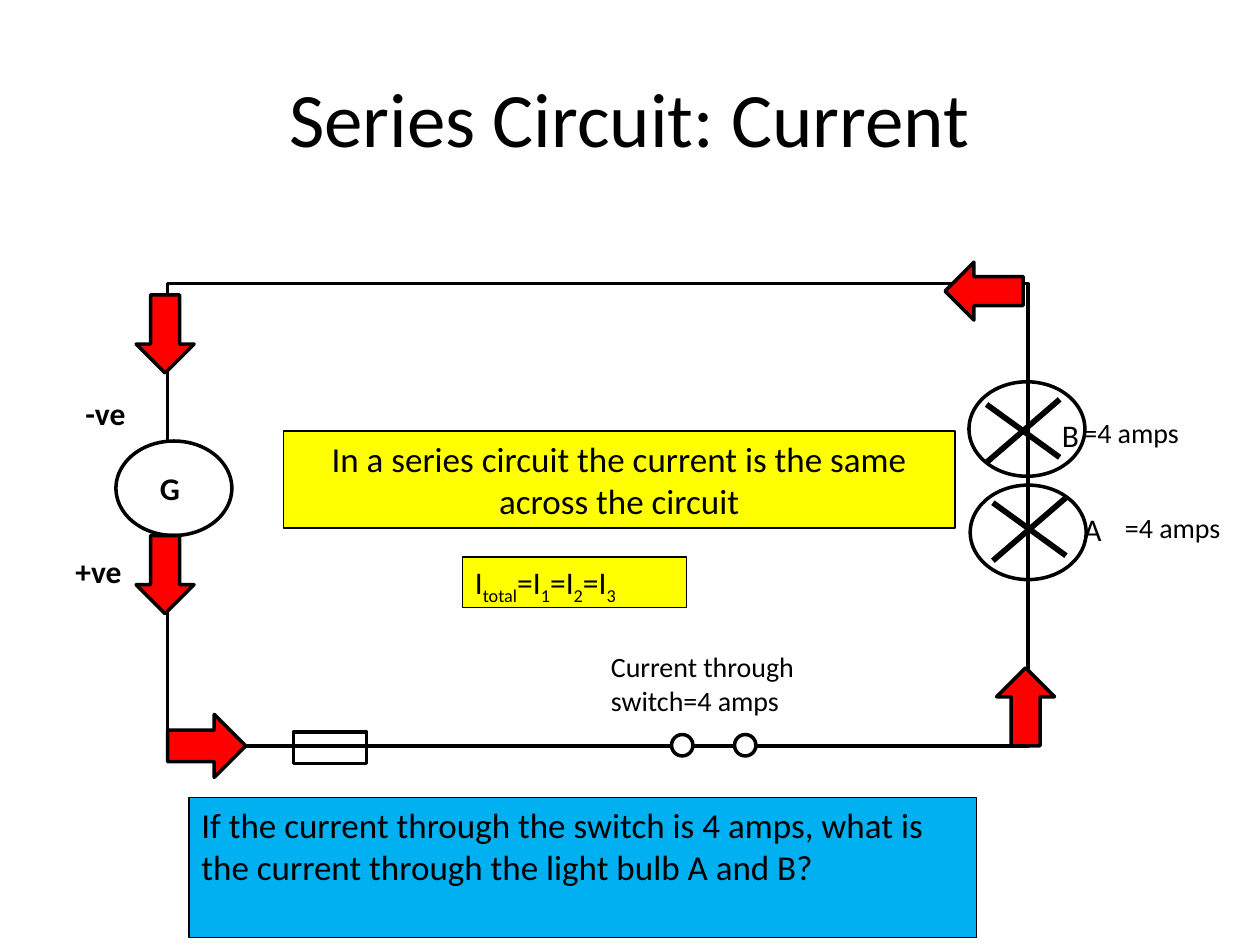
import pptx
import pptx.dml.color
import pptx.enum.shapes
import pptx.enum.text
import pptx.oxml.ns
import pptx.util
from lxml import etree
from pptx.util import Inches

BLACK = pptx.dml.color.RGBColor(0x00, 0x00, 0x00)
WHITE = pptx.dml.color.RGBColor(0xFF, 0xFF, 0xFF)
RED = pptx.dml.color.RGBColor(0xFF, 0x00, 0x00)
YELLOW = pptx.dml.color.RGBColor(0xFF, 0xFF, 0x00)
BLUE = pptx.dml.color.RGBColor(0x00, 0xB0, 0xF0)

SHAPE = pptx.enum.shapes.MSO_SHAPE
ALIGN = pptx.enum.text.PP_ALIGN
ANCHOR = pptx.enum.text.MSO_ANCHOR
SUBSCRIPT = "-25000"


def add_outlined(page, kind, place, fill=None, width=2, rotation=0):
    """Add a black-outlined preset shape; without a fill it is see-through."""
    shape = page.shapes.add_shape(kind, *map(Inches, place))
    shape.shadow.inherit = False
    shape.rotation = rotation
    if fill is None:
        shape.fill.background()
    else:
        shape.fill.solid()
        shape.fill.fore_color.rgb = fill
    shape.line.color.rgb = BLACK
    shape.line.width = pptx.util.Pt(width)
    return shape


def format_span(span, size, bold=False):
    span.font.name = "Calibri"
    span.font.size = pptx.util.Pt(size)
    span.font.bold = bold
    span.font.color.rgb = BLACK


def write(shape, text, size, bold=False, align=ALIGN.LEFT, anchor=ANCHOR.TOP):
    frame = shape.text_frame
    frame.word_wrap = True
    frame.vertical_anchor = anchor
    frame.text = text
    para = frame.paragraphs[0]
    para.alignment = align
    for span in para.runs:
        format_span(span, size, bold)


def add_label(page, place, text, size, **style):
    box = page.shapes.add_textbox(*map(Inches, place))
    write(box, text, size, **style)


def add_panel(page, place, fill, text, align=ALIGN.LEFT):
    panel = add_outlined(page, SHAPE.RECTANGLE, place, fill, width=0.75)
    write(panel, text, 20, align=align)


def add_formula(page, place, pieces):
    """Write (base, subscript) pairs in a yellow box."""
    panel = add_outlined(page, SHAPE.RECTANGLE, place, YELLOW, width=0.75)
    frame = panel.text_frame
    frame.word_wrap = False
    frame.vertical_anchor = ANCHOR.TOP
    para = frame.paragraphs[0]
    para.alignment = ALIGN.LEFT
    for base, subscript in pieces:
        for text, is_subscript in ((base, False), (subscript, True)):
            span = para.add_run()
            span.text = text
            format_span(span, 18)
            if is_subscript:
                span.font._element.set("baseline", SUBSCRIPT)


def add_stroke(page, start, end):
    stroke = page.shapes.add_connector(
        pptx.enum.shapes.MSO_CONNECTOR.STRAIGHT, *map(Inches, start + end))
    stroke.line.color.rgb = BLACK
    stroke.line.width = pptx.util.Pt(3.25)
    etree.SubElement(stroke._element.spPr, pptx.oxml.ns.qn("a:effectLst"))


def add_bulb_cross(page, left, top):
    right = left + 0.58
    add_stroke(page, (left, top + 0.5), (right, top))
    add_stroke(page, (right, top + 0.46), (left, top + 0.04))


def add_generator(page):
    add_outlined(page, SHAPE.OVAL, (0.92, 3.5, 0.92, 0.75), WHITE)
    add_label(page, (1.17, 3.67, 0.42, 0.4), "G", 18, bold=True)
    add_label(page, (0.58, 3.08, 0.75, 0.4), "-ve", 18, bold=True)
    add_label(page, (0.5, 4.33, 0.75, 0.4), "+ve", 18, bold=True)


def add_circuit(page):
    add_outlined(page, SHAPE.RECTANGLE, (1.33, 2.25, 6.83, 3.67))
    add_generator(page)
    add_outlined(page, SHAPE.RECTANGLE, (2.33, 5.81, 0.58, 0.25))
    for contact_left in (5.33, 5.83):
        add_outlined(page, SHAPE.OVAL, (contact_left, 5.83, 0.17, 0.17), WHITE)
    add_bulb_cross(page, 7.88, 3.95)
    for left, top, height, rotation in (
        (1, 4.33, 0.46, 90),
        (1.33, 5.67, 0.5, 0),
        (7.83, 5.38, 0.46, 270),
        (7.5, 2.08, 0.46, 180),
        (1, 2.42, 0.46, 90),
    ):
        add_outlined(page, SHAPE.RIGHT_ARROW, (left, top, 0.62, height), RED,
                     rotation=rotation)
    add_bulb_cross(page, 7.83, 3.17)


def main():
    deck = pptx.Presentation()
    deck.slide_width, deck.slide_height = Inches(10), Inches(7.5)
    page = deck.slides.add_slide(deck.slide_layouts[6])

    for left, top in ((7.69, 3.03), (7.7, 3.85)):
        add_outlined(page, SHAPE.OVAL, (left, top, 0.92, 0.75), WHITE)
    add_label(page, (0.5, 0.3, 9, 1.25), "Series Circuit: Current", 44,
              align=ALIGN.CENTER, anchor=ANCHOR.MIDDLE)
    add_circuit(page)

    add_panel(page, (1.5, 6.33, 6.25, 1.11), BLUE,
              "If the current through the switch is 4 amps, what is the "
              "current through the light bulb A and B?")
    for name, top, name_left, value_left in (
        ("A", 4, 8.5, 8.83),
        ("B", 3.25, 8.33, 8.5),
    ):
        add_label(page, (name_left, top, 0.5, 0.4), name, 18)
        add_label(page, (value_left, top, 1.25, 0.37), "=4 amps", 16)
    add_label(page, (4.75, 5.11, 2.08, 0.64),
              "Current through switch=4 amps", 16)
    add_panel(page, (2.25, 3.42, 5.33, 0.77), YELLOW,
              "In a series circuit the current is the same across the circuit",
              align=ALIGN.CENTER)
    add_formula(page, (3.67, 4.42, 1.78, 0.4),
                (("I", "total"), ("=I", "1"), ("=I", "2"), ("=I", "3")))

    deck.save("out.pptx")


if __name__ == "__main__":
    main()
